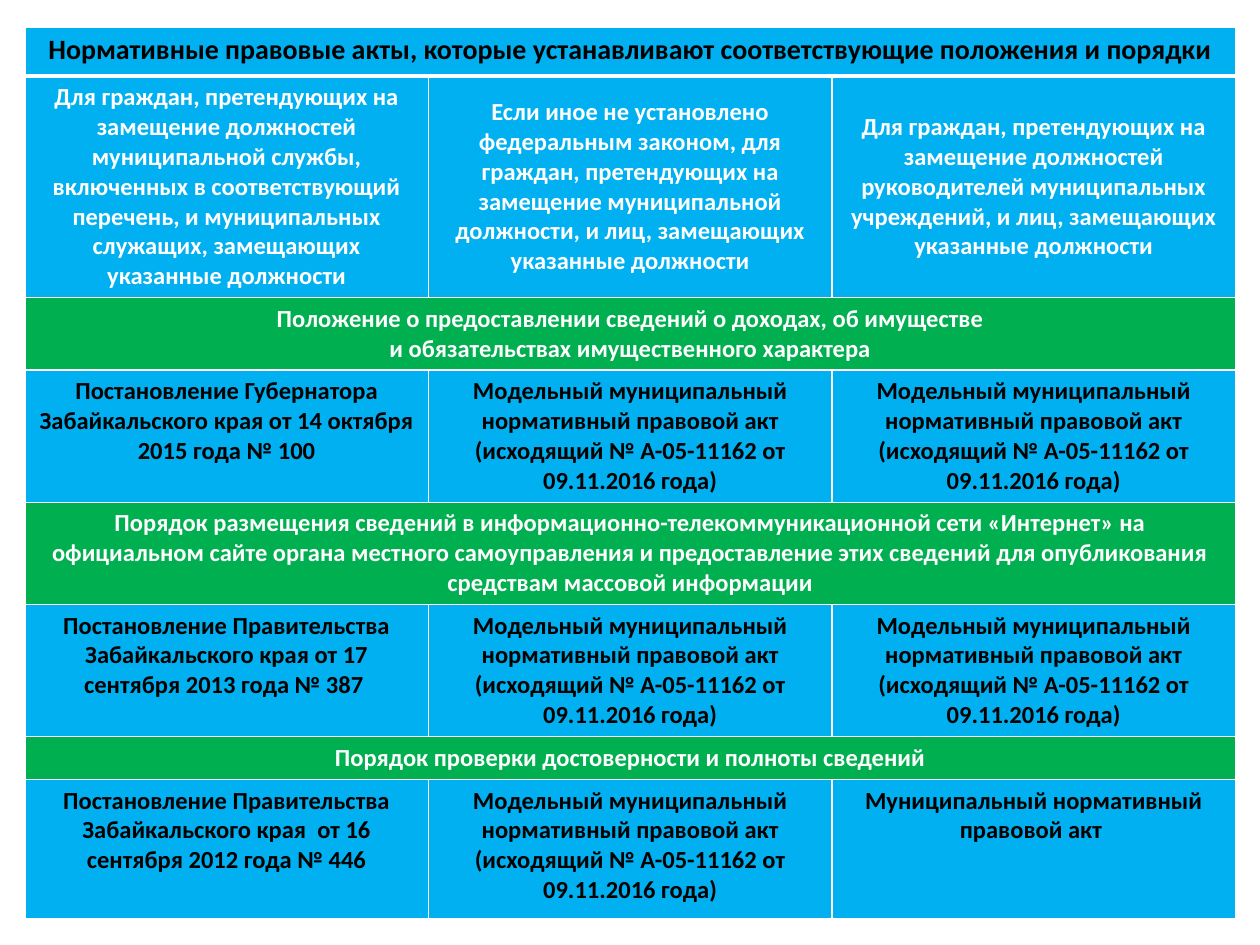
from lxml import etree
from pptx import Presentation
from pptx.dml.color import RGBColor
from pptx.enum.text import MSO_ANCHOR, PP_ALIGN
from pptx.oxml.ns import qn
from pptx.util import Pt

CENTER = PP_ALIGN.CENTER
TOP, MIDDLE = MSO_ANCHOR.TOP, MSO_ANCHOR.MIDDLE

BLUE = RGBColor(0x00, 0xB0, 0xF0)
GREEN = RGBColor(0x00, 0xB0, 0x50)
WHITE = RGBColor(0xFF, 0xFF, 0xFF)
BLACK = RGBColor(0x00, 0x00, 0x00)
FONT = "Calibri"

MODEL_ACT = ("Модельный муниципальный нормативный правовой акт "
             "(исходящий № А-05-11162 от 09.11.2016 года)")

# Row kind, height, cell texts; a single text spans the whole row
ROWS = [
    ("title", 28.2, ["Нормативные правовые акты, которые устанавливают "
                     "соответствующие положения и порядки"]),
    ("audience", 126.6, [
        "Для граждан, претендующих на замещение должностей муниципальной службы, "
        "включенных в соответствующий перечень, и муниципальных служащих, "
        "замещающих указанные должности",
        "Если иное не установлено федеральным законом, для граждан, претендующих "
        "на замещение муниципальной должности, и лиц, замещающих указанные должности",
        "Для граждан, претендующих на замещение должностей руководителей "
        "муниципальных учреждений, и лиц, замещающих указанные должности"]),
    ("section", 41.4, ["Положение о предоставлении сведений о доходах, об имуществе\n"
                       "и обязательствах имущественного характера"]),
    ("acts", 75.6, ["Постановление Губернатора Забайкальского края от 14 октября "
                    "2015 года № 100", MODEL_ACT, MODEL_ACT]),
    ("section", 58.4, ["Порядок размещения сведений в информационно-телекоммуникационной "
                       "сети «Интернет» на официальном сайте органа местного самоуправления "
                       "и предоставление этих сведений для опубликования средствам "
                       "массовой информации"]),
    ("acts", 75.6, ["Постановление Правительства Забайкальского края от 17 сентября "
                    "2013 года № 387 ", MODEL_ACT, MODEL_ACT]),
    ("section", 24.4, ["Порядок проверки достоверности и полноты сведений"]),
    ("acts", 79.8, ["Постановление Правительства Забайкальского края  от 16 сентября "
                    "2012 года № 446", MODEL_ACT,
                    "Муниципальный нормативный правовой акт "]),
]

STYLES = {
    "title": dict(fill=BLUE, color=BLACK, size=16, bottom=3),
    "audience": dict(fill=BLUE, color=WHITE, anchor=MIDDLE, top=3),
    "section": dict(fill=GREEN, color=WHITE),
    "acts": dict(fill=BLUE, color=BLACK),
}

COLUMNS = 3
LEFT, TABLE_TOP, COLUMN_WIDTH = 14.2, 15.3, 230.6


def set_borders(cell, top, bottom):
    """Draw white cell borders, 1 pt at the sides."""
    tc_pr = cell._tc.get_or_add_tcPr()
    for i, (side, width) in enumerate((("L", 1), ("R", 1), ("T", top), ("B", bottom))):
        ln = etree.Element(qn(f"a:ln{side}"), w=str(Pt(width)))
        fill = etree.SubElement(ln, qn("a:solidFill"))
        etree.SubElement(fill, qn("a:srgbClr"), val=str(WHITE))
        tc_pr.insert(i, ln)


def write_cell(cell, text, fill, color, size=14, anchor=TOP, top=1, bottom=1):
    cell.fill.solid()
    cell.fill.fore_color.rgb = fill
    cell.vertical_anchor = anchor
    set_borders(cell, top, bottom)
    cell.text_frame.text = text
    for p in cell.text_frame.paragraphs:
        p.alignment = CENTER
        for r in p.runs:
            r.font.name = FONT
            r.font.size = Pt(size)
            r.font.bold = True
            r.font.color.rgb = color


def main():
    prs = Presentation()
    prs.slide_width, prs.slide_height = Pt(720), Pt(540)
    s = prs.slides.add_slide(prs.slide_layouts[6])

    table = s.shapes.add_table(
        len(ROWS), COLUMNS, Pt(LEFT), Pt(TABLE_TOP),
        Pt(COLUMNS * COLUMN_WIDTH), Pt(sum(height for _, height, _ in ROWS))).table
    table.horz_banding = False
    for column in table.columns:
        column.width = Pt(COLUMN_WIDTH)

    for i, (kind, height, texts) in enumerate(ROWS):
        table.rows[i].height = Pt(height)
        if len(texts) == 1:
            table.cell(i, 0).merge(table.cell(i, COLUMNS - 1))
        for j, text in enumerate(texts):
            write_cell(table.cell(i, j), text, **STYLES[kind])

    prs.save("out.pptx")


if __name__ == "__main__":
    main()
